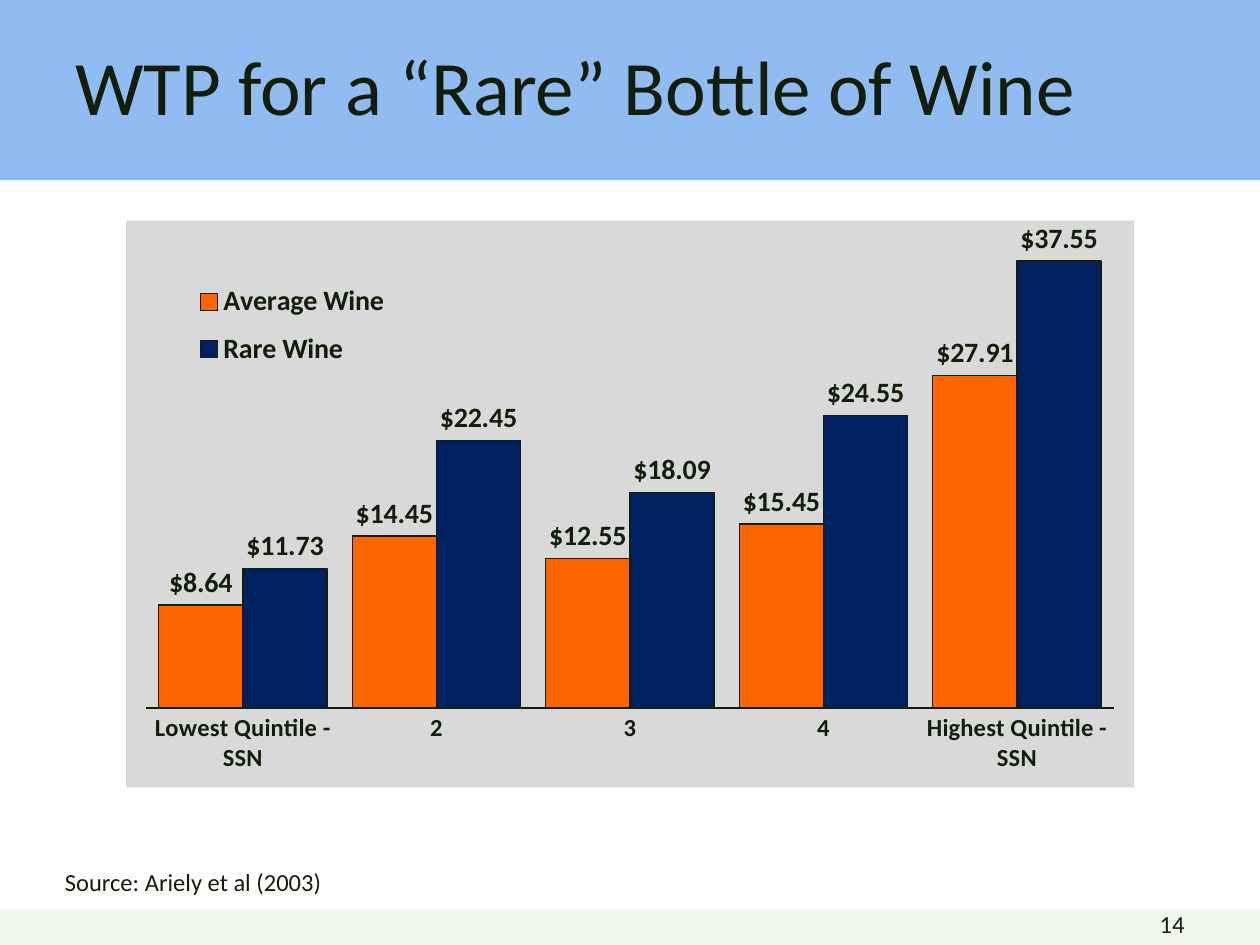
from lxml import etree
from pptx import Presentation
from pptx.chart.data import CategoryChartData
from pptx.dml.color import RGBColor
from pptx.enum.chart import XL_CHART_TYPE, XL_LABEL_POSITION, XL_LEGEND_POSITION, XL_TICK_MARK
from pptx.enum.shapes import MSO_SHAPE
from pptx.enum.text import MSO_ANCHOR, PP_ALIGN
from pptx.oxml import parse_xml
from pptx.oxml.ns import nsdecls, qn
from pptx.util import Pt

FONT = "Calibri"
COLORS = {
    "text": "121D0B",
    "header": "91BCF2",
    "footer": "F2F8ED",
    "panel": "D9D9D9",
    "average": "FF6600",
    "rare": "002060",
}
QUINTILES = ["Lowest Quintile - SSN", "2", "3", "4", "Highest Quintile - SSN"]
WINES = [
    ("Average Wine", "average", [8.64, 14.45, 12.55, 15.45, 27.91]),
    ("Rare Wine", "rare", [11.73, 22.45, 18.09, 24.55, 37.55]),
]


def rgb(key):
    return RGBColor.from_string(COLORS[key])


def style_font(font, size, bold=False):
    font.name = FONT
    font.size = Pt(size)
    font.bold = bold
    font.color.rgb = rgb("text")


def add_band(slide, left, top, width, height, color):
    band = slide.shapes.add_shape(MSO_SHAPE.RECTANGLE, Pt(left), Pt(top), Pt(width), Pt(height))
    band.fill.solid()
    band.fill.fore_color.rgb = rgb(color)
    band.line.fill.background()
    band.shadow.inherit = False


def add_text(slide, left, top, width, height, text, size,
             anchor=MSO_ANCHOR.TOP, align=PP_ALIGN.LEFT):
    frame = slide.shapes.add_textbox(Pt(left), Pt(top), Pt(width), Pt(height)).text_frame
    frame.word_wrap = True
    frame.vertical_anchor = anchor
    paragraph = frame.paragraphs[0]
    paragraph.text = text
    paragraph.alignment = align
    style_font(paragraph.font, size)


def add_header(slide, left, top, width, height):
    add_band(slide, left, top, width, height, "header")
    add_text(slide, left + 36, top + 20, width - 67, 57,
             "WTP for a “Rare” Bottle of Wine", 44, MSO_ANCHOR.MIDDLE)


def add_footer(slide, left, top, width, height):
    add_band(slide, left, top, width, height, "footer")
    add_text(slide, left + 30, top - 40, 312, 36, "Source: Ariely et al (2003)", 14,
             MSO_ANCHOR.BOTTOM)
    add_text(slide, left + width - 204, top - 4, 168, 22, "14", 14, align=PP_ALIGN.RIGHT)


def manual_layout(x, y, w, h, inner=False):
    """Chart layout element, in fractions of the chart area."""
    target = '<c:layoutTarget val="inner"/>' if inner else ""
    sizes = "".join(f'<c:{tag} val="{value}"/>'
                    for tag, value in zip("xywh", (x, y, w, h)))
    return parse_xml(
        f'<c:layout {nsdecls("c")}><c:manualLayout>{target}'
        f'<c:xMode val="edge"/><c:yMode val="edge"/>{sizes}</c:manualLayout></c:layout>')


def replace_layout(parent, layout, index):
    for old in parent.findall(qn("c:layout")):
        parent.remove(old)
    parent.insert(index, layout)


def panel_fill():
    return parse_xml(
        f'<c:spPr {nsdecls("c", "a")}><a:solidFill><a:srgbClr val="{COLORS["panel"]}"/>'
        '</a:solidFill><a:ln><a:noFill/></a:ln></c:spPr>')


def style_series(series, color):
    series.format.fill.solid()
    series.format.fill.fore_color.rgb = rgb(color)
    series.format.line.color.rgb = rgb("text")
    series.format.line.width = Pt(0.75)
    labels = series.data_labels
    labels.show_value = True
    labels.number_format = '"$"#,##0.00'
    labels.number_format_is_linked = False
    labels.position = XL_LABEL_POSITION.OUTSIDE_END
    style_font(labels.font, 16, bold=True)


def style_axes(chart):
    quintile_axis = chart.category_axis
    quintile_axis.major_tick_mark = XL_TICK_MARK.NONE
    quintile_axis.format.line.color.rgb = rgb("text")
    quintile_axis.format.line.width = Pt(0.75)
    style_font(quintile_axis.tick_labels.font, 14, bold=True)
    price_axis = chart.value_axis
    price_axis.minimum_scale = 0
    price_axis.maximum_scale = 40
    price_axis.has_major_gridlines = False
    price_axis.visible = False


def add_price_chart(slide, left, top, width, height):
    data = CategoryChartData(number_format="0.00")
    data.categories = QUINTILES
    for name, _, prices in WINES:
        data.add_series(name, prices)
    chart = slide.shapes.add_chart(XL_CHART_TYPE.COLUMN_CLUSTERED, Pt(left), Pt(top),
                                   Pt(width), Pt(height), data).chart
    style_font(chart.font, 10)
    chart.has_title = False
    plot = chart.plots[0]
    plot.gap_width = 30
    plot.overlap = 0
    plot.vary_by_categories = False
    for series, (_, color, _) in zip(plot.series, WINES):
        style_series(series, color)
    style_axes(chart)

    chart.has_legend = True
    legend = chart.legend
    legend.position = XL_LEGEND_POSITION.RIGHT
    legend.include_in_layout = True
    style_font(legend.font, 16, bold=True)

    chart_space = chart.element
    plot_area = chart_space.find(".//" + qn("c:plotArea"))
    legend_area = chart_space.find(".//" + qn("c:legend"))
    replace_layout(plot_area, manual_layout(0.02, 0.02, 0.96, 0.84, inner=True), 0)
    replace_layout(legend_area, manual_layout(0.06, 0.09, 0.21, 0.19), 1)
    plot_area.append(panel_fill())
    chart_space.find(qn("c:chart")).addnext(panel_fill())


def main():
    presentation = Presentation()
    presentation.slide_width = Pt(720)
    presentation.slide_height = Pt(540)
    slide = presentation.slides.add_slide(presentation.slide_layouts[6])
    add_header(slide, 0, 0, 720, 103)
    add_footer(slide, 0, 520, 720, 20)
    add_price_chart(slide, 72, 126, 576, 324)
    presentation.save("out.pptx")


if __name__ == "__main__":
    main()
